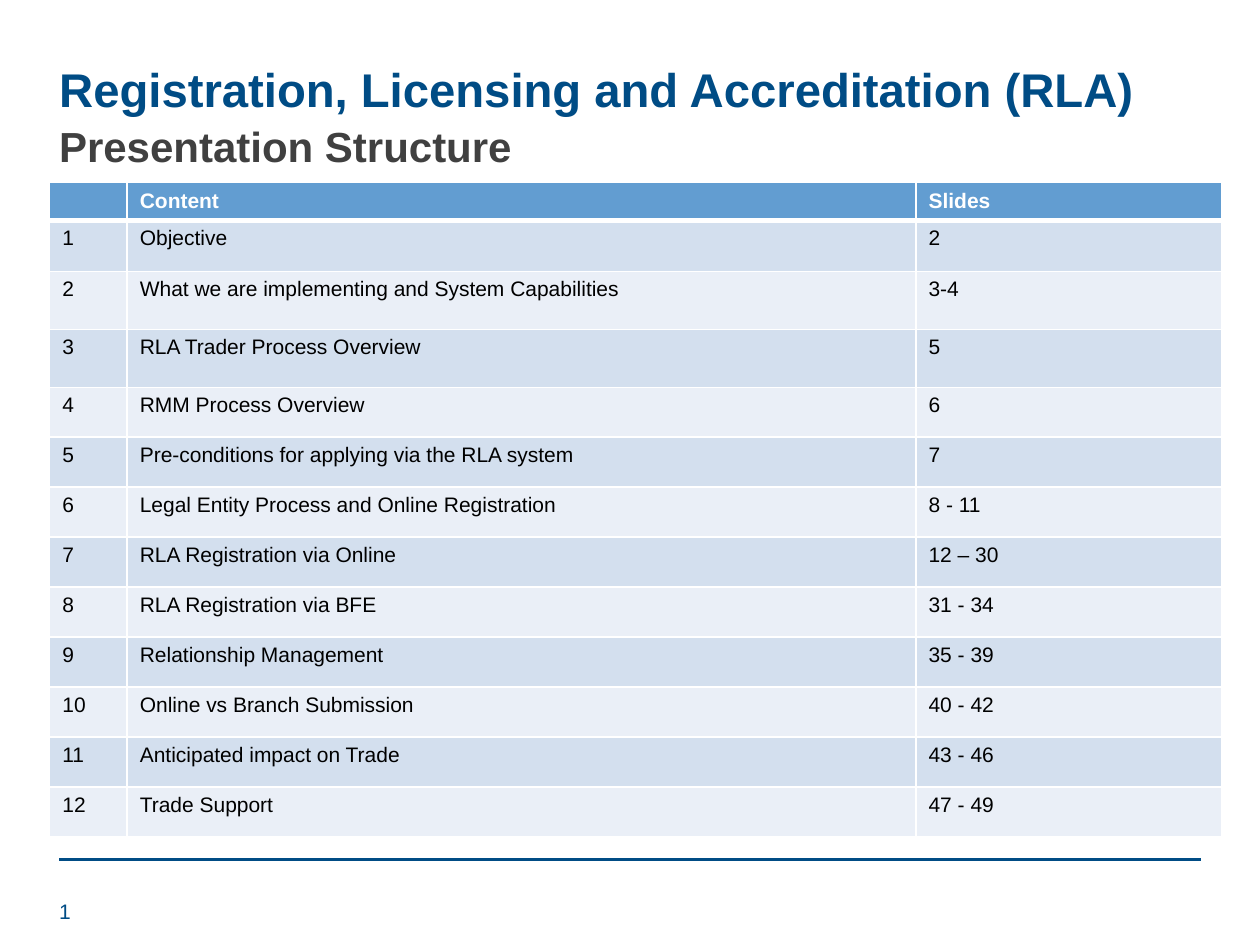
"""Build the presentation structure slide."""
from dataclasses import dataclass

from lxml import etree
from pptx import Presentation
from pptx.dml.color import RGBColor
from pptx.enum.shapes import MSO_CONNECTOR
from pptx.enum.text import MSO_ANCHOR, PP_ALIGN
from pptx.oxml.ns import qn
from pptx.util import Inches, Pt

STRAIGHT = MSO_CONNECTOR.STRAIGHT
TOP, MIDDLE = MSO_ANCHOR.TOP, MSO_ANCHOR.MIDDLE
LEFT = PP_ALIGN.LEFT
WIDTH, HEIGHT = Inches(10), Inches(7.5)


@dataclass(frozen=True)
class Theme:
    """Colours, font and type sizes of the slide."""
    font: str = "Arial"
    navy: str = "004C85"
    grey: str = "404040"
    white: str = "FFFFFF"
    black: str = "000000"
    header: str = "629DD1"
    bands: tuple = ("D3DFEE", "EAEFF7")
    title: int = 27
    subtitle: int = 24
    body: int = 12


THEME = Theme()
HEADER = ("", "Content", "Slides")
TOPICS = (
    ("Objective", "2"),
    ("What we are implementing and System Capabilities", "3-4"),
    ("RLA Trader Process Overview", "5"),
    ("RMM Process Overview", "6"),
    ("Pre-conditions for applying via the RLA system", "7"),
    ("Legal Entity Process and Online Registration", "8 - 11"),
    ("RLA Registration via Online", "12 – 30"),
    ("RLA Registration via BFE", "31 - 34"),
    ("Relationship Management", "35 - 39"),
    ("Online vs Branch Submission", "40 - 42"),
    ("Anticipated impact on Trade", "43 - 46"),
    ("Trade Support", "47 - 49"),
)
COLUMNS = (6.15, 62.6, 24.3)
ROWS = (4, 5.4, 6.13, 6.13) + (5.29,) * 9


def across(share):
    """Return a percentage of the slide width."""
    return int(WIDTH * share / 100)


def down(share):
    """Return a percentage of the slide height."""
    return int(HEIGHT * share / 100)


def box(x, y, w, h):
    """Return left, top, width and height from percentages."""
    return across(x), down(y), across(w), down(h)


def write(tf, text, size, color, bold=False, spacing=None):
    """Write one formatted paragraph into a text frame."""
    p = tf.paragraphs[0]
    if spacing:
        p.line_spacing = spacing
    if not text:
        etree.SubElement(p._p, qn("a:endParaRPr"), sz=str(size * 100))
        return
    r = p.add_run()
    r.text = text
    for name, value in {"name": THEME.font, "size": Pt(size), "bold": bold}.items():
        setattr(r.font, name, value)
    r.font.color.rgb = RGBColor.from_string(color)


def set_frame(tf, anchor):
    """Set wrapping and anchoring of a text frame."""
    for name, value in {"word_wrap": True, "vertical_anchor": anchor}.items():
        setattr(tf, name, value)


def add_title(slide, text, bounds):
    """Place and fill the title placeholder."""
    sp = slide.shapes.title
    sp.left, sp.top, sp.width, sp.height = bounds
    set_frame(sp.text_frame, TOP)
    sp.text_frame.paragraphs[0].alignment = LEFT
    write(sp.text_frame, text, THEME.title, THEME.navy, True, 0.9)


def add_text(slide, text, bounds, size, color, anchor=TOP, **style):
    """Add a wrapped text box."""
    tf = slide.shapes.add_textbox(*bounds).text_frame
    set_frame(tf, anchor)
    write(tf, text, size, color, **style)


def add_rule(slide, x1, x2, y):
    """Add the horizontal rule above the page number."""
    line = slide.shapes.add_connector(STRAIGHT, across(x1), down(y), across(x2), down(y))
    line.line.color.rgb = RGBColor.from_string(THEME.navy)
    line.line.width = Pt(2)
    etree.SubElement(line._element.spPr, qn("a:effectLst"))


def set_borders(cell, widths):
    """Draw white cell borders with the given widths by side."""
    pr = cell._tc.get_or_add_tcPr()
    for i, (side, width) in enumerate(widths.items()):
        ln = etree.Element(qn(f"a:ln{side}"), w=str(Pt(width)))
        fill = etree.SubElement(ln, qn("a:solidFill"))
        etree.SubElement(fill, qn("a:srgbClr"), val=THEME.white)
        pr.insert(i, ln)


def add_contents(slide, x, y):
    """Add the numbered table of topics and slide ranges."""
    data = [HEADER] + [(str(n), *topic) for n, topic in enumerate(TOPICS, 1)]
    bounds = box(x, y, sum(COLUMNS), sum(ROWS))
    table = slide.shapes.add_table(len(data), len(HEADER), *bounds).table
    for column, share in zip(table.columns, COLUMNS):
        column.width = across(share)
    for i, (row, values) in enumerate(zip(table.rows, data)):
        row.height = down(ROWS[i])
        head = i == 0
        fill = THEME.header if head else THEME.bands[(i - 1) % 2]
        color = THEME.white if head else THEME.black
        borders = {"L": 1, "R": 1, "T": 3 if i == 1 else 1, "B": 3 if head else 1}
        for cell, text in zip(row.cells, values):
            cell.fill.solid()
            cell.fill.fore_color.rgb = RGBColor.from_string(fill)
            set_borders(cell, borders)
            write(cell.text_frame, text, THEME.body, color, head)


def main():
    """Build and save the slide."""
    prs = Presentation()
    prs.slide_width, prs.slide_height = WIDTH, HEIGHT
    slide = prs.slides.add_slide(prs.slide_layouts[5])
    add_rule(slide, 4.7, 95.3, 90.93)
    add_title(slide, "Registration, Licensing and Accreditation (RLA)",
              box(3.7, 6.4, 94.7, 7.73))
    add_text(slide, "1", box(3.7, 93.73, 22.5, 5.33), THEME.body, THEME.navy, MIDDLE)
    add_text(slide, "Presentation Structure", box(3.7, 12.67, 86.2, 6.4),
             THEME.subtitle, THEME.grey, bold=True, spacing=0.9)
    add_contents(slide, 3.95, 19.33)
    prs.save("out.pptx")


if __name__ == "__main__":
    main()
